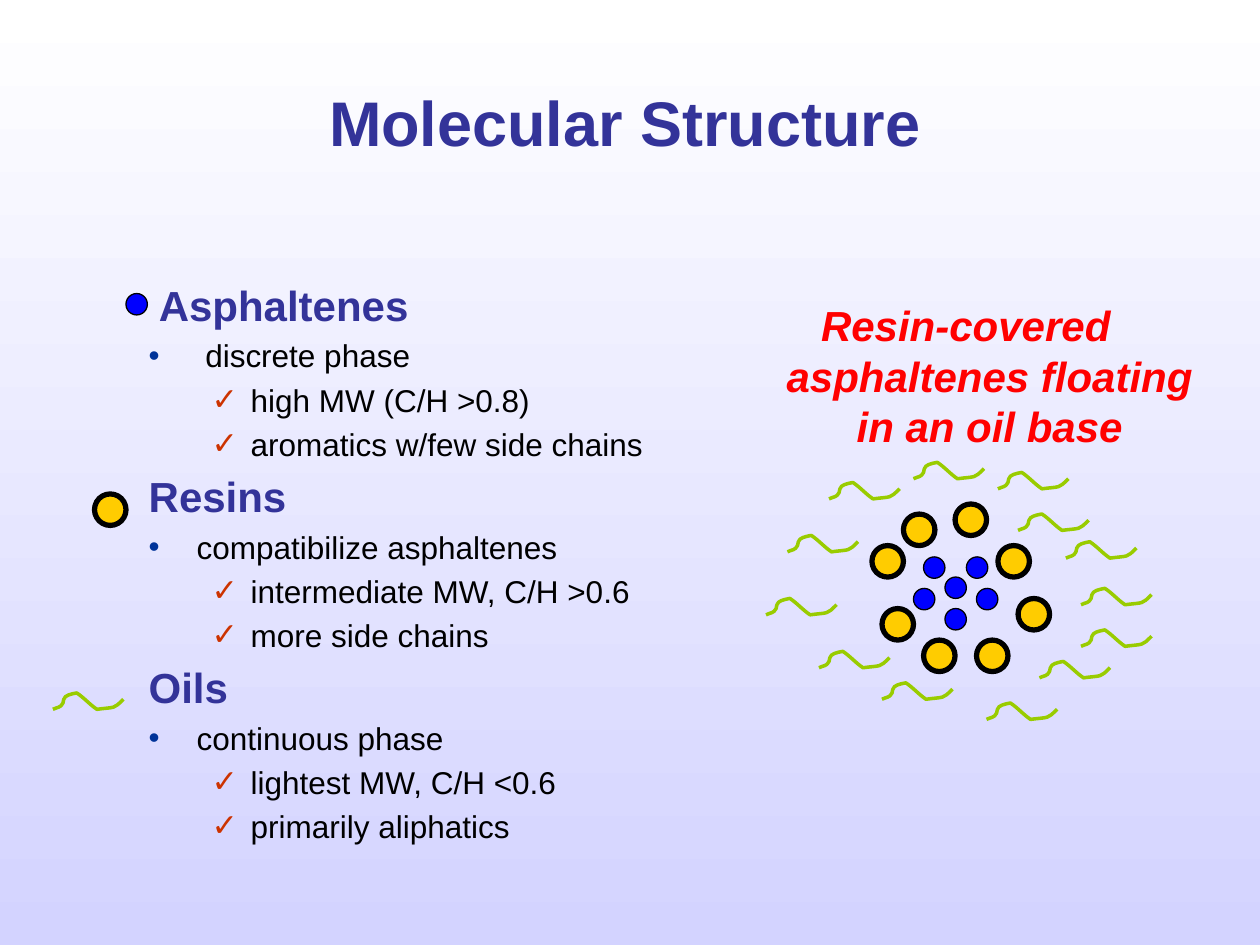
from lxml import etree
from pptx import Presentation, util as u
from pptx.dml import color
from pptx.enum import shapes, text
from pptx.oxml import ns

HUES = {
    "white": "FFFFFF", "mist": "D3D3FF", "head": "333399", "ink": "000000",
    "red": "FF0000", "dot": "003399", "tick": "CC3300",
    "blue": "0000FF", "gold": "FFCC00", "oil": "99CC00",
}

BODY = [
    (" Asphaltenes", " discrete phase",
     ["high MW (C/H >0.8)", "aromatics w/few side chains"]),
    ("Resins", "compatibilize asphaltenes",
     ["intermediate MW, C/H >0.6", "more side chains"]),
    ("Oils", "continuous phase",
     ["lightest MW, C/H <0.6", "primarily aliphatics"]),
]

CORES = [(7.33, 4.42), (7.25, 4.67), (7.5, 4.58), (7.67, 4.42),
         (7.75, 4.67), (7.5, 4.83)]
RINGS = [(7.33, 5.08), (7.75, 5.08), (8.08, 4.75), (7.92, 4.33),
         (7.58, 4), (7.17, 4.08), (6.92, 4.33), (7, 4.83)]
WAVES = [(6.25, 4.25), (7.25, 3.67), (6.58, 3.83), (8.08, 4.08),
         (8.58, 5), (8.25, 5.25), (7.83, 5.58), (7, 5.42), (6.5, 5.17),
         (6.08, 4.75), (8.46, 4.3), (8.58, 4.67), (7.92, 3.75)]

START = (0, 0.13)
CURVES = [
    (0.04, 0.11), (0.06, 0.12), (0.08, 0.08),
    (0.09, 0.06), (0.08, 0.04), (0.1, 0.03),
    (0.12, 0.01), (0.19, 0), (0.19, 0),
    (0.25, 0.04), (0.29, 0.09), (0.35, 0.13),
    (0.5, 0.11), (0.48, 0.13), (0.56, 0.05),
]


def rgb(name):
    """Return the named colour."""
    return color.RGBColor.from_string(HUES[name])


def bend(shape):
    """Turn each three line segments of a freeform into one curve."""
    lines = list(shape._element.iter(ns.qn("a:lnTo")))
    for n in range(0, len(lines), 3):
        curve = etree.Element(ns.qn("a:cubicBezTo"))
        lines[n].addprevious(curve)
        for line in lines[n:n + 3]:
            curve.append(line[0])
            line.getparent().remove(line)


def write(para, words, size=18, hue="ink", bold=False, italic=False,
          align=None, mark=None, tint="dot", level=0, left=None, hang=0, gap=0):
    """Put formatted words into a paragraph."""
    para.level = level
    para.alignment = align
    para.space_before = u.Pt(gap)
    if left is not None:
        props = para._p.get_or_add_pPr()
        props.set("marL", str(u.Inches(left)))
        props.set("indent", str(u.Inches(-hang)))
        if mark:
            paint = etree.SubElement(props, ns.qn("a:buClr"))
            etree.SubElement(paint, ns.qn("a:srgbClr"), val=HUES[tint])
            etree.SubElement(props, ns.qn("a:buChar"), char=mark)
        else:
            etree.SubElement(props, ns.qn("a:buNone"))
    run = para.add_run()
    run.text = words
    font = run.font
    font.name, font.size = "Arial", u.Pt(size)
    font.bold, font.italic = bold, italic
    font.color.rgb = rgb(hue)


class Deck:
    """Hold the style and the current slide."""

    def __init__(self):
        """Start a deck with one shaded slide."""
        self.file = Presentation()
        self.file.slide_width, self.file.slide_height = u.Inches(10), u.Inches(7.5)
        self.slide = self.file.slides.add_slide(self.file.slide_layouts[1])
        fill = self.slide.background.fill
        fill.gradient()
        fill.gradient_angle = 270
        for stop, hue, spot in zip(fill.gradient_stops, ("white", "mist"), (0, 1)):
            stop.color.rgb = rgb(hue)
            stop.position = spot

    def frame(self, shape, box, anchor=text.MSO_ANCHOR.TOP):
        """Place a text shape and return its frame."""
        shape.left, shape.top, shape.width, shape.height = map(u.Inches, box)
        frame = shape.text_frame
        frame.word_wrap = True
        frame.auto_size = text.MSO_AUTO_SIZE.NONE
        frame.vertical_anchor = anchor
        return frame

    def title(self, words, box):
        """Fill the title placeholder."""
        frame = self.frame(self.slide.shapes.title, box, text.MSO_ANCHOR.MIDDLE)
        write(frame.paragraphs[0], words, size=36, hue="head", bold=True,
              align=text.PP_ALIGN.CENTER)

    def list(self, parts, box):
        """Fill the body placeholder with headed lists."""
        frame = self.frame(self.slide.placeholders[1], box)
        para = frame.paragraphs[0]
        for n, (head, point, ticks) in enumerate(parts):
            if n:
                para = frame.add_paragraph()
            write(para, head, size=24, hue="head", bold=True,
                  left=0.38, hang=0.38, gap=4.8 if n else 0)
            write(frame.add_paragraph(), point, mark="•",
                  left=0.38, hang=0.38, gap=3.6)
            for tick in ticks:
                write(frame.add_paragraph(), tick, mark="✓", tint="tick",
                      level=1, left=0.81, hang=0.31, gap=3.6)

    def note(self, words, box):
        """Add the centred caption."""
        shape = self.slide.shapes.add_textbox(*map(u.Inches, box))
        frame = self.frame(shape, box)
        write(frame.paragraphs[0], words, size=24, hue="red", bold=True,
              italic=True, align=text.PP_ALIGN.CENTER, left=0.38, hang=0.38)

    def ball(self, home, x, y, size, hue, rim):
        """Add one outlined disc."""
        ball = home.add_shape(shapes.MSO_SHAPE.OVAL,
                              *map(u.Inches, (x, y, size, size)))
        ball.shadow.inherit = False
        ball.fill.solid()
        ball.fill.fore_color.rgb = rgb(hue)
        ball.line.color.rgb = rgb("ink")
        ball.line.width = u.Pt(rim)

    def core(self, home, x, y):
        """Add one asphaltene."""
        self.ball(home, x, y, 0.17, "blue", 0.75)

    def ring(self, home, x, y):
        """Add one resin."""
        self.ball(home, x, y, 0.25, "gold", 3)

    def wave(self, home, x, y):
        """Add one oil chain."""
        pen = home.build_freeform(u.Inches(x + START[0]), u.Inches(y + START[1]))
        pen.add_line_segments(
            [(u.Inches(x + a), u.Inches(y + b)) for a, b in CURVES], close=False)
        wave = pen.convert_to_shape()
        bend(wave)
        wave.shadow.inherit = False
        wave.fill.background()
        wave.line.color.rgb = rgb("oil")
        wave.line.width = u.Pt(2)

    def group(self, draw, spots):
        """Draw one kind of part at each spot in a group."""
        home = self.slide.shapes.add_group_shape().shapes
        for x, y in spots:
            draw(home, x, y)


def main():
    """Build the slide."""
    deck = Deck()
    deck.title("Molecular Structure", (0.67, 0.42, 8.58, 1.08))
    deck.list(BODY, (1.08, 2.17, 4.83, 4.5))
    deck.note("Resin-covered asphaltenes floating in an oil base",
              (5.58, 2.33, 4.17, 0.92))
    deck.group(deck.core, CORES)
    deck.group(deck.ring, RINGS)
    deck.group(deck.wave, WAVES)
    home = deck.slide.shapes
    deck.wave(home, 0.42, 5.5)
    deck.ring(home, 0.75, 3.92)
    deck.core(home, 1, 2.33)
    deck.file.save("out.pptx")


if __name__ == "__main__":
    main()
